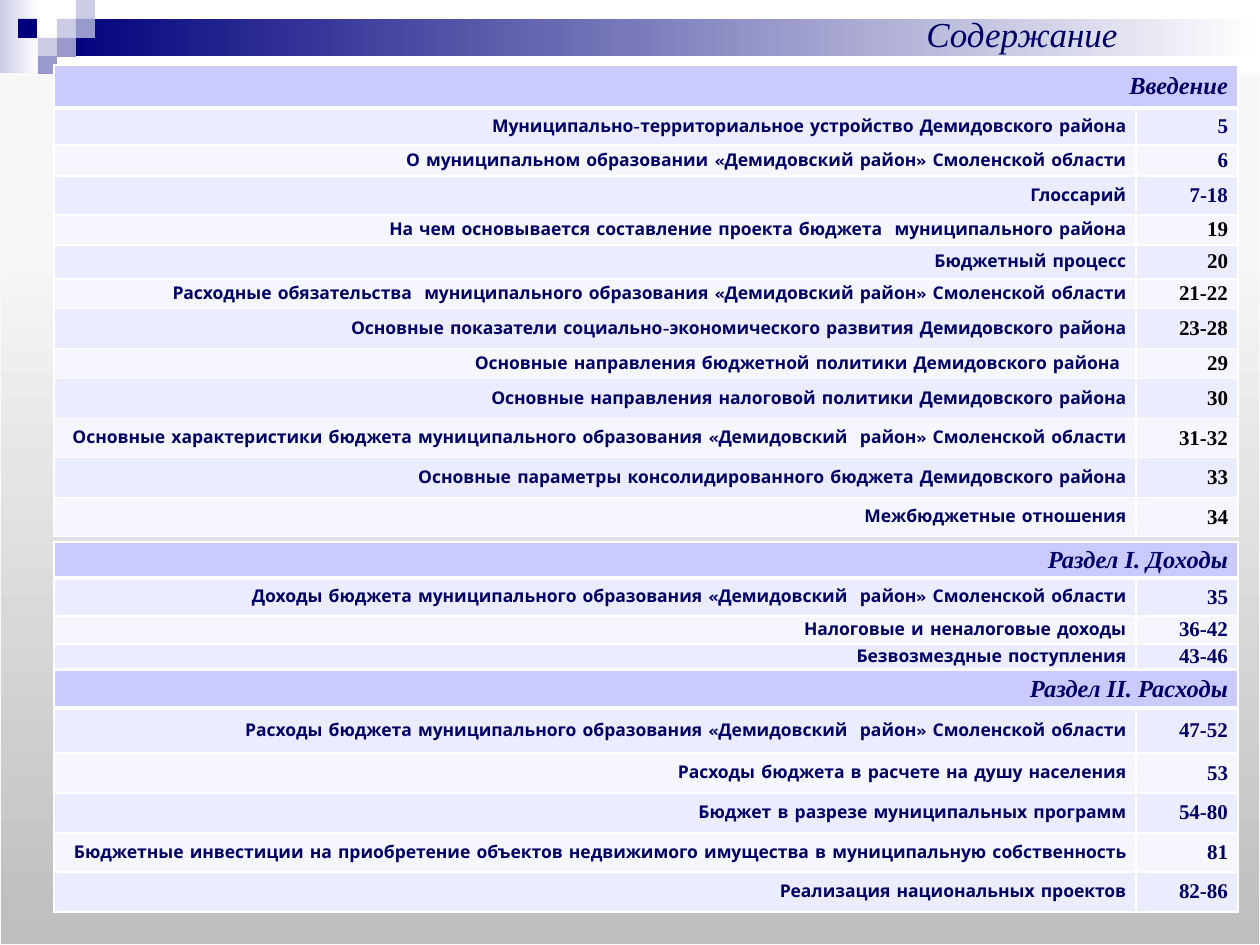
from copy import deepcopy

from lxml.etree import SubElement
from pptx import Presentation
from pptx.dml.color import RGBColor
from pptx.enum.shapes import MSO_SHAPE
from pptx.enum.text import MSO_ANCHOR, PP_ALIGN
from pptx.oxml.ns import qn
from pptx.util import Pt

PX = 914400 / 126  # EMU in one px

NAVY = RGBColor(0x00, 0x00, 0x7D)
INK = RGBColor(0x00, 0x00, 0x66)
BLACK = RGBColor(0x00, 0x00, 0x00)
WHITE = RGBColor(0xFF, 0xFF, 0xFF)
PALE = RGBColor(0xCC, 0xCC, 0xE6)
LILAC = RGBColor(0x99, 0x99, 0xCC)
GREY = RGBColor(0xBE, 0xBE, 0xBE)
MIST = RGBColor(0xF7, 0xF7, 0xF7)
FOG = RGBColor(0xF8, 0xF8, 0xF8)
EDGE = RGBColor(0xF9, 0xF9, 0xF9)
HEAD = RGBColor(0xCA, 0xCA, 0xFF)
BANDS = [RGBColor(0xF6, 0xF6, 0xFF), RGBColor(0xEC, 0xEC, 0xFF)]

SERIF = "Times New Roman"
COMIC = "Comic Neue"

prs = Presentation()
prs.slide_width, prs.slide_height = round(1260 * PX), round(945 * PX)
s = prs.slides.add_slide(prs.slide_layouts[6])


def add_box(x, y, w, h, stops, angle=0, kind=MSO_SHAPE.RECTANGLE):
    """Add a borderless shape; one stop gives a solid fill, more a gradient."""
    sp = s.shapes.add_shape(kind, *(round(v * PX) for v in (x, y, w, h)))
    sp.shadow.inherit = False
    sp.line.fill.background()
    if len(stops) == 1:
        sp.fill.solid()
        sp.fill.fore_color.rgb = stops[0][1]
        return sp
    sp.fill.gradient()
    sp.fill.gradient_angle = angle
    gs_list = sp._element.spPr.find(".//" + qn("a:gsLst"))
    while len(gs_list) < len(stops):
        gs_list.append(deepcopy(gs_list[-1]))
    for stop, (position, color) in zip(sp.fill.gradient_stops, stops):
        stop.position = position
        stop.color.rgb = color
    return sp


def style_cell(cell, text, font, size, color, fill, top=1, bottom=1, italic=False):
    """Fill one table cell with right-aligned bold text and white borders."""
    cell.margin_left = cell.margin_right = round(10 * PX)
    cell.margin_top = cell.margin_bottom = 0
    cell.vertical_anchor = MSO_ANCHOR.MIDDLE
    tcPr = cell._tc.get_or_add_tcPr()
    for side, width in (("L", 1), ("R", 1), ("T", top), ("B", bottom)):
        ln = SubElement(tcPr, qn("a:ln" + side), w=str(Pt(width)))
        solid = SubElement(ln, qn("a:solidFill"))
        SubElement(solid, qn("a:srgbClr"), val=str(WHITE))
    cell.fill.solid()
    cell.fill.fore_color.rgb = fill
    p = cell.text_frame.paragraphs[0]
    p.text = text
    p.alignment = PP_ALIGN.RIGHT
    p.font.name, p.font.size, p.font.color.rgb = font, Pt(size), color
    p.font.bold, p.font.italic = True, italic


# Header band and its squares
add_box(0, 0, 39, 73, [(0, PALE), (1, WHITE)])
add_box(57, 19, 1203, 37, [(0, NAVY), (1, WHITE)])
for x, y, color in [(57, 19, PALE), (76, 0, PALE), (76, 19, LILAC), (38, 38, PALE),
                    (18, 19, NAVY), (57, 38, LILAC), (38, 56, LILAC)]:
    add_box(x, y, 19, 19, [(0, color)])

# Grey panel with a soft shadow
panel = add_box(0, 75, 1260, 870, [(0, GREY), (0.8, MIST), (1, FOG)], 90,
                MSO_SHAPE.FLOWCHART_PROCESS)
panel.line.color.rgb = EDGE
panel.line.width = Pt(0.75)
effects = panel._element.spPr.find(qn("a:effectLst"))
shadow = SubElement(effects, qn("a:outerShdw"), blurRad=str(Pt(3.1)),
                    dist=str(Pt(1.8)), dir="5400000", rotWithShape="0")
shade = SubElement(shadow, qn("a:srgbClr"), val=str(BLACK))
SubElement(shade, qn("a:alpha"), val="35000")

# Title
title = s.shapes.add_textbox(*(round(v * PX) for v in (789, 6, 466, 55)))
tf = title.text_frame
tf.word_wrap = True
p = tf.paragraphs[0]
p.text = "Содержание"
p.alignment = PP_ALIGN.CENTER
p.font.name, p.font.size, p.font.color.rgb = SERIF, Pt(20), INK
p.font.italic = True

# Contents: top, heading, heading height, (text, pages, row height, page colour)
SECTIONS = [
    (65, "Введение", 43, [
        ("Муниципально-территориальное устройство Демидовского района", "5", 37, INK),
        ("О муниципальном образовании «Демидовский район» Смоленской области", "6", 31, INK),
        ("Глоссарий", "7-18", 39, INK),
        ("На чем основывается составление проекта бюджета  муниципального района",
         "19", 30, BLACK),
        ("Бюджетный процесс", "20", 34, BLACK),
        ("Расходные обязательства  муниципального образования «Демидовский район» "
         "Смоленской области", "21-22", 30, BLACK),
        ("Основные показатели социально-экономического развития Демидовского района",
         "23-28", 40, BLACK),
        ("Основные направления бюджетной политики Демидовского района ", "29", 30, BLACK),
        ("Основные направления налоговой политики Демидовского района", "30", 40, BLACK),
        ("Основные характеристики бюджета муниципального образования «Демидовский  район» "
         "Смоленской области", "31-32", 39, BLACK),
        ("Основные параметры консолидированного бюджета Демидовского района",
         "33", 40, BLACK),
        ("Межбюджетные отношения", "34", 39, BLACK),
    ]),
    (542, "Раздел I. Доходы", 36, [
        ("Доходы бюджета муниципального образования «Демидовский  район» "
         "Смоленской области", "35", 38, INK),
        ("Налоговые и неналоговые доходы", "36-42", 28, INK),
        ("Безвозмездные поступления", "43-46", 25, INK),
    ]),
    (670, "Раздел II. Расходы", 38, [
        ("Расходы бюджета муниципального образования «Демидовский  район» "
         "Смоленской области", "47-52", 45, INK),
        ("Расходы бюджета в расчете на душу населения", "53", 40, INK),
        ("Бюджет в разрезе муниципальных программ", "54-80", 40, INK),
        ("Бюджетные инвестиции на приобретение объектов недвижимого имущества "
         "в муниципальную собственность", "81", 39, INK),
        ("Реализация национальных проектов", "82-86", 40, INK),
    ]),
]

# One table per section
for top, heading, head_height, entries in SECTIONS:
    heights = [head_height] + [entry[2] for entry in entries]
    frame = s.shapes.add_table(len(heights), 2, *(
        round(v * PX) for v in (54, top, 1184, sum(heights))))
    table = frame.table
    for column, width in zip(table.columns, (1082, 102)):
        column.width = round(width * PX)
    for row, height in zip(table.rows, heights):
        row.height = round(height * PX)
    for col, text in enumerate((heading, "")):
        style_cell(table.cell(0, col), text, SERIF, 14, INK, HEAD, bottom=3, italic=True)
    table.cell(0, 0).merge(table.cell(0, 1))
    for i, (text, pages, _, color) in enumerate(entries, 1):
        fill, line = BANDS[i % 2], 3 if i == 1 else 1
        style_cell(table.cell(i, 0), text, COMIC, 10, INK, fill, top=line)
        style_cell(table.cell(i, 1), pages, SERIF, 12, color, fill, top=line)

prs.save("out.pptx")
